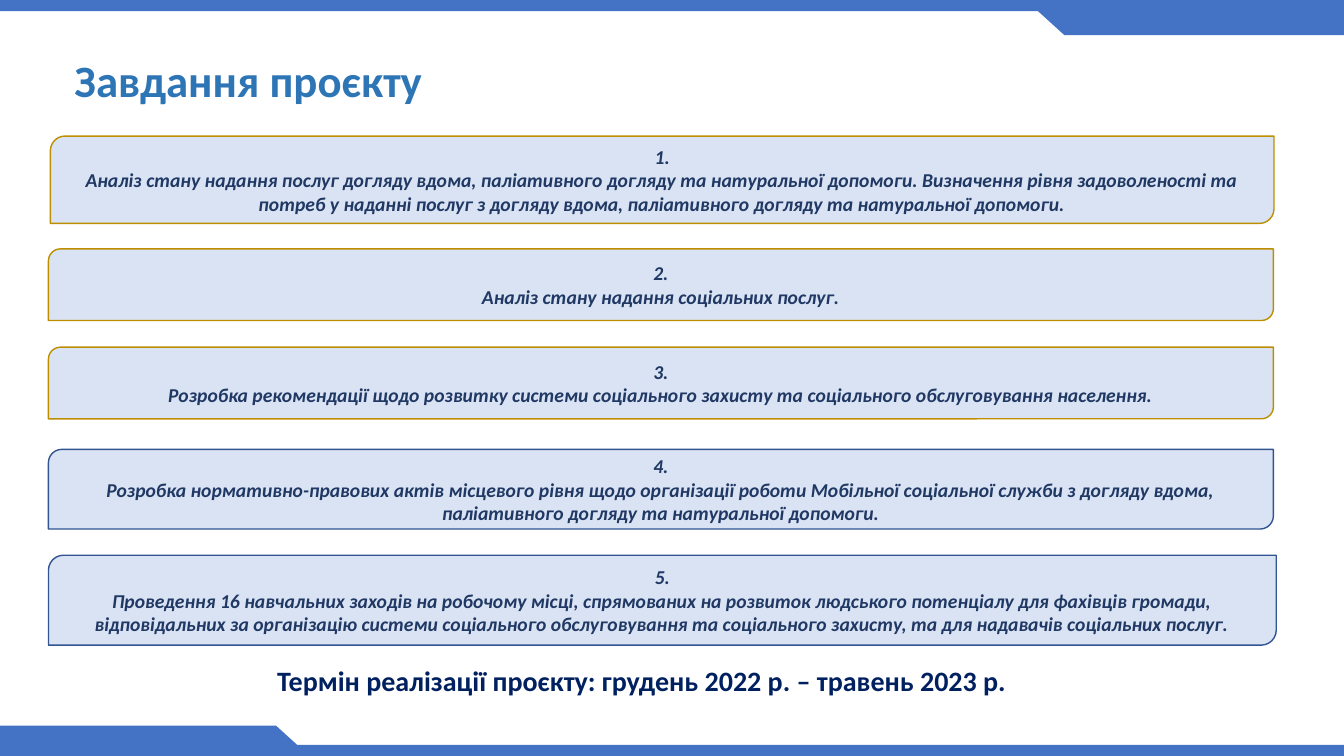
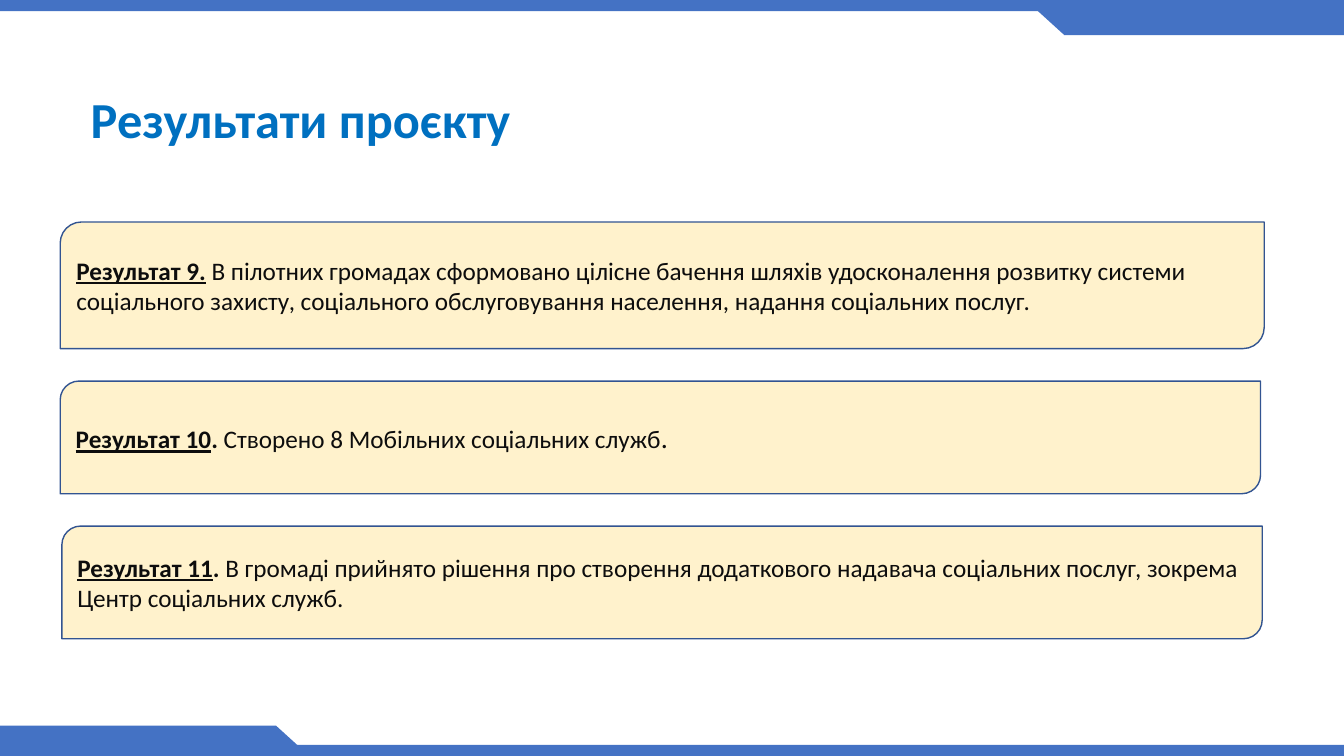
"""Build two slides on the tasks and the results of a project."""
from pptx import Presentation
from pptx.dml.color import RGBColor
from pptx.enum.shapes import MSO_SHAPE
from pptx.enum.text import MSO_ANCHOR, MSO_AUTO_SIZE, PP_ALIGN
from pptx.util import Pt

RECT = MSO_SHAPE.RECTANGLE
WEDGE = MSO_SHAPE.FLOWCHART_MERGE
CARD = MSO_SHAPE.ROUND_2_DIAG_RECTANGLE
MIDDLE = MSO_ANCHOR.MIDDLE
FIXED = MSO_AUTO_SIZE.NONE
LEFT, CENTER = PP_ALIGN.LEFT, PP_ALIGN.CENTER

WIDE, HIGH = 960, 540
FONT = "Calibri"
COLORS = {
    "band": "4472C4", "task": "DAE3F3", "result": "FFF2CC",
    "gold": "BD8E00", "blue": "325491", "navy": "203864",
    "ink": "0D0D0D", "term": "002060",
    "title1": "2E75B6", "title2": "0070C0",
}

BANDS = [
    (RECT, 0, 0, WIDE, 8, 0),
    (RECT, 0, 532, WIDE, 8, 0),
    (RECT, 760, 3.6, 200, 21.6, 0),
    (WEDGE, 736, 3, 47.5, 21.6, 0),
    (RECT, 0, 518.4, 197.3, 21.6, 0),
    (WEDGE, 173.5, 518.4, 47.5, 21.6, 180),
]

TASKS = [
    ((36, 97.2, 874, 62.4), "gold",
     "Аналіз стану надання послуг догляду вдома, паліативного догляду та "
     "натуральної допомоги. Визначення рівня задоволеності та потреб у наданні "
     "послуг з догляду вдома, паліативного догляду та натуральної допомоги."),
    ((34.6, 177.8, 875, 51.2), "gold",
     "Аналіз стану надання соціальних послуг."),
    ((34.6, 248, 875, 51.2), "gold",
     "Розробка рекомендації щодо розвитку системи соціального захисту та "
     "соціального обслуговування населення."),
    ((34.6, 321, 875, 56.9), "blue",
     "Розробка нормативно-правових актів місцевого рівня щодо організації роботи "
     "Мобільної соціальної служби з догляду вдома, паліативного догляду та "
     "натуральної допомоги."),
    ((34.6, 396.6, 877, 64.2), "blue",
     "Проведення 16 навчальних заходів на робочому місці, спрямованих на розвиток "
     "людського потенціалу для фахівців громади, відповідальних за організацію "
     "системи соціального обслуговування та соціального захисту, та для надавачів "
     "соціальних послуг."),
]
TERM = "Термін реалізації проєкту: грудень 2022 р. – травень 2023 р."

STYLES = {
    "head": (18, True, True),
    "bold": (18, True, False),
    "body": (18, False, False),
    "stop": (20, False, False),
}
RESULTS = [
    ((43, 158.6, 860, 90.4),
     [("Результат 9.", "head"), (" ", "bold"),
      ("В пілотних громадах сформовано цілісне бачення шляхів удосконалення "
       "розвитку системи соціального захисту, соціального обслуговування "
       "населення, надання соціальних послуг.", "body")]),
    ((43, 272.2, 857.4, 80.5),
     [("Результат 10", "head"), (". ", "bold"),
      ("Створено 8 Мобільних соціальних служб", "body"), (".", "stop")]),
    ((44.2, 375.8, 857.4, 80.5),
     [("Результат 11", "head"), (". ", "bold"),
      ("В громаді прийнято рішення про створення додаткового надавача "
       "соціальних послуг, зокрема Центр соціальних служб.", "body")]),
]


def color(name):
    return RGBColor.from_string(COLORS[name])


def style(font, size, tone, bold=True, italic=False):
    font.name, font.size = FONT, Pt(size)
    font.bold, font.italic = bold, italic
    font.color.rgb = color(tone)


def add_form(slide, kind, box, fill, line=None):
    form = slide.shapes.add_shape(kind, *map(Pt, box))
    form.shadow.inherit = False
    form.fill.solid()
    form.fill.fore_color.rgb = color(fill)
    if line:
        form.line.color.rgb = color(line)
        form.line.width = Pt(1)
    else:
        form.line.fill.background()
    return form


def add_card(slide, box, fill, line):
    frame = add_form(slide, CARD, box, fill, line).text_frame
    frame.word_wrap = True
    frame.vertical_anchor = MIDDLE
    return frame


def add_slide(deck, text, left, top, size, tone):
    slide = deck.slides.add_slide(deck.slide_layouts[5])
    for kind, x, y, w, h, turn in BANDS:
        add_form(slide, kind, (x, y, w, h), "band").rotation = turn
    title = slide.shapes.title
    title.left, title.top, title.width, title.height = map(Pt, (left, top, 828, 60))
    frame = title.text_frame
    frame.text = text
    frame.auto_size = FIXED
    frame.vertical_anchor = MIDDLE
    para = frame.paragraphs[0]
    para.alignment = LEFT
    para.line_spacing = 0.9
    style(para.font, size, tone)
    return slide


def add_tasks(deck):
    slide = add_slide(deck, "Завдання проєкту", 46, 29, 32, "title1")
    for num, (box, line, text) in enumerate(TASKS, 1):
        frame = add_card(slide, box, "task", line)
        frame.text = f"{num}.\n{text}"
        for para in frame.paragraphs:
            para.alignment = CENTER
            style(para.font, 14, "navy", italic=True)
    note = slide.shapes.add_textbox(*map(Pt, (190.8, 470.2, 646, 32)))
    frame = note.text_frame
    frame.word_wrap = True
    frame.text = TERM
    style(frame.paragraphs[0].font, 20, "term")


def add_results(deck):
    slide = add_slide(deck, "Результати проєкту", 57.6, 57.5, 36, "title2")
    for box, parts in RESULTS:
        para = add_card(slide, box, "result", "blue").paragraphs[0]
        para.alignment = LEFT
        for text, look in parts:
            run = para.add_run()
            run.text = text
            size, bold, under = STYLES[look]
            style(run.font, size, "ink", bold)
            run.font.underline = under


def main():
    deck = Presentation()
    deck.slide_width, deck.slide_height = Pt(WIDE), Pt(HIGH)
    add_tasks(deck)
    add_results(deck)
    deck.save("out.pptx")


if __name__ == "__main__":
    main()
